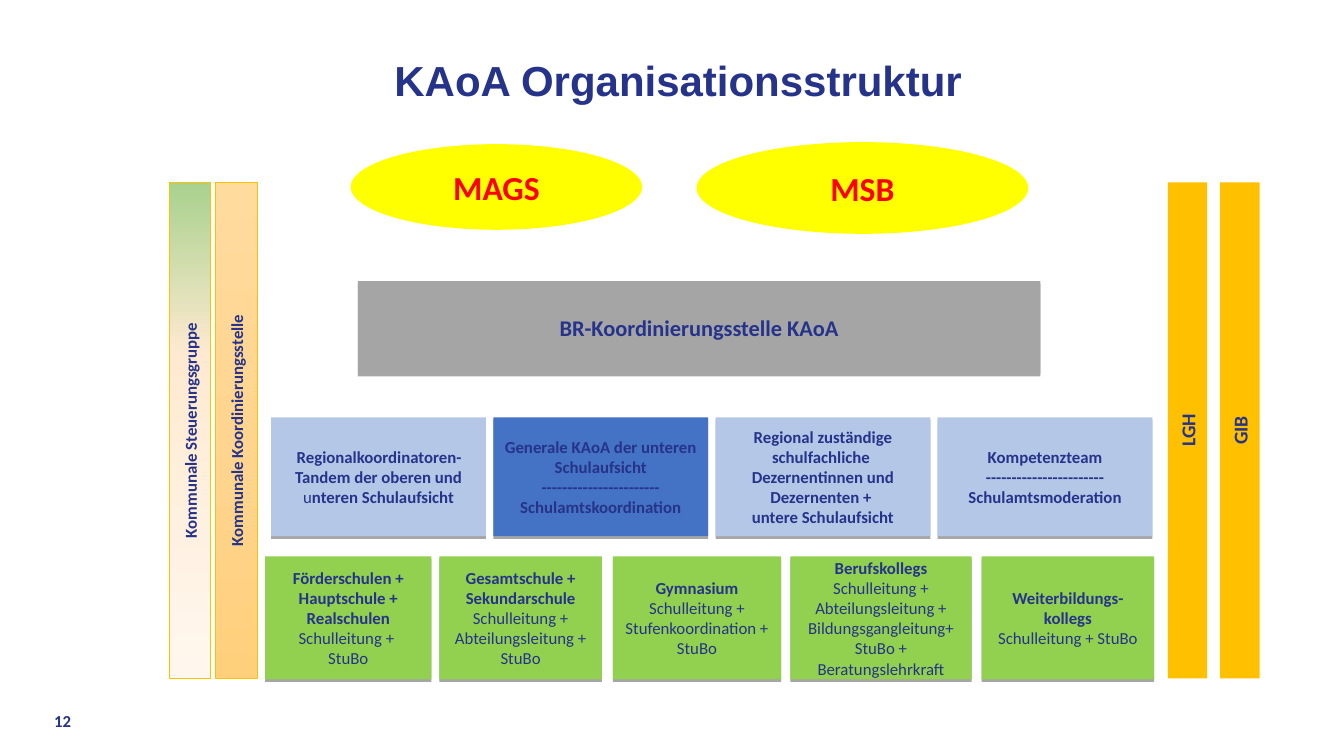
from lxml import etree
from pptx import Presentation
from pptx.dml.color import RGBColor
from pptx.enum.shapes import MSO_SHAPE as Shape
from pptx.enum.text import MSO_ANCHOR as Anchor, PP_ALIGN as Align
from pptx.oxml import parse_xml
from pptx.oxml.ns import nsdecls, qn
from pptx.util import Inches, Pt

WIDTH, HEIGHT = Inches(13.33), Inches(7.5)
COLUMN, ROW = WIDTH / 100, HEIGHT / 100
COLORS = {
    "navy": "26338A", "red": "FF0000", "yellow": "FFFF00", "gold": "FFC000",
    "gray": "A5A5A5", "blue": "4472C4", "sky": "B4C7E7", "green": "92D050",
}
STEERING_FADE = [(0, "A9D18E"), (35, "FFEAD1"), (100, "FFF7EE")]
COORDINATION_FADE = [(0, "FFDB9E"), (50, "FFD590"), (100, "FFD07C")]
PILLAR_TOP, PILLAR_HEIGHT = 24.13, 65.6
DIVIDER = "-----------------------"

OFFICES = [
    ("sky", ["Regionalkoordinatoren-Tandem der oberen und |u|nteren Schulaufsicht"]),
    ("blue", ["Generale KAoA der unteren", "Schulaufsicht", DIVIDER,
              "Schulamtskoordination"]),
    ("sky", ["Regional zuständige schulfachliche ",
             "Dezernentinnen und Dezernenten + ", "untere Schulaufsicht"]),
    ("sky", ["Kompetenzteam", DIVIDER, "Schulamtsmoderation"]),
]
SCHOOLS = [
    (19.73, 12.38, ["Förderschulen + Hauptschule + Realschulen",
                    "|Schulleitung + ", "|StuBo"]),
    (32.7, 12.08, ["Gesamtschule +", "Sekundarschule",
                   "|Schulleitung + Abteilungsleitung + StuBo"]),
    (45.6, 12.53, ["Gymnasium", "|Schulleitung +", "|Stufenkoordination + StuBo"]),
    (58.8, 13.5, ["Berufskollegs",
                  "|Schulleitung + Abteilungsleitung + Bildungsgangleitung+",
                  "|StuBo + Beratungslehrkraft"]),
    (73.05, 12.83, ["Weiterbildungs-kollegs", "|Schulleitung + StuBo"]),
]


def place(left, top, width, height):
    return (round(left * COLUMN), round(top * ROW),
            round(width * COLUMN), round(height * ROW))


def write(frame, lines, size, color="navy", face="Calibri", align=Align.CENTER):
    """Parts of a line divided by | alternate between bold and regular."""
    frame.word_wrap = True
    frame.vertical_anchor = Anchor.MIDDLE
    for number, line in enumerate(lines):
        paragraph = frame.add_paragraph() if number else frame.paragraphs[0]
        paragraph.alignment = align
        font = paragraph.font
        font.name, font.size = face, Pt(size)
        font.color.rgb = RGBColor.from_string(COLORS[color])
        parts = [(part, i % 2 == 0) for i, part in enumerate(line.split("|")) if part]
        for part, bold in parts:
            run = paragraph.add_run()
            run.text = part
            if len(parts) > 1:
                run.font.bold = bold
        if len(parts) == 1:
            font.bold = parts[0][1]


def add_label(slide, area, lines, size, **style):
    frame = slide.shapes.add_textbox(*area).text_frame
    write(frame, lines, size, **style)
    return frame


def add_block(slide, area, fill, lines, size=12, kind=Shape.RECTANGLE, color="navy"):
    block = slide.shapes.add_shape(kind, *area)
    block.shadow.inherit = False
    block.fill.solid()
    block.fill.fore_color.rgb = RGBColor.from_string(COLORS[fill])
    block.line.fill.background()
    write(block.text_frame, lines, size, color)
    return block


def add_raised_block(slide, area, fill, lines, size=12):
    block = add_block(slide, area, fill, lines, size)
    effects = block.element.spPr.find(qn("a:effectLst"))
    effects.append(parse_xml(
        f'<a:outerShdw {nsdecls("a")} blurRad="0" dist="22860" dir="5400000" '
        'rotWithShape="0"><a:srgbClr val="000000"><a:alpha val="35000"/>'
        '</a:srgbClr></a:outerShdw>'))


def add_turned_pillar(slide, left, label):
    x, y, width, height = place(left, PILLAR_TOP, 2.93, PILLAR_HEIGHT)
    shift = (height - width) // 2
    pillar = add_block(slide, (x - shift, y + shift, height, width),
                       "gold", [label], 14)
    pillar.rotation = 270


def add_fading_pillar(slide, left, label, fade):
    area = place(left, PILLAR_TOP, 3.08, PILLAR_HEIGHT)
    pillar = add_block(slide, area, "gold", [label])
    pillar.line.color.rgb = RGBColor.from_string(COLORS["gold"])
    pillar.line.width = Pt(0.5)
    pillar.text_frame._txBody.bodyPr.set("vert", "vert270")
    gradient = parse_xml(f'<a:gradFill {nsdecls("a")} rotWithShape="1"/>')
    stops = etree.SubElement(gradient, qn("a:gsLst"))
    for position, color in fade:
        stop = etree.SubElement(stops, qn("a:gs"), pos=str(position * 1000))
        etree.SubElement(stop, qn("a:srgbClr"), val=color)
    etree.SubElement(gradient, qn("a:lin"), ang="5400000", scaled="0")
    properties = pillar.element.spPr
    properties.replace(properties.find(qn("a:solidFill")), gradient)


def main():
    deck = Presentation()
    deck.slide_width, deck.slide_height = WIDTH, HEIGHT
    slide = deck.slides.add_slide(deck.slide_layouts[6])

    add_label(slide, place(3.3, 92.67, 13.58, 5.33), ["12 | ".replace("|", "¦")
              .replace("¦", "|")] and ["12 \u007c "], 12, align=Align.LEFT)
    title = add_label(slide, place(16.73, 6.27, 67.5, 8.53),
                      ["KAoA Organisationsstruktur"], 30, face="Arial")
    title.margin_left = title.margin_right = title.margin_top = title.margin_bottom = 0

    add_block(slide, place(26.1, 19.07, 21.68, 11.33), "yellow", ["MAGS"],
              24, Shape.OVAL, "red")
    add_block(slide, place(51.83, 18.8, 24.68, 12.13), "yellow", ["MSB"],
              24, Shape.OVAL, "red")
    add_turned_pillar(slide, 90.79, "GIB")
    add_turned_pillar(slide, 86.89, "LGH")
    add_raised_block(slide, place(26.63, 37.2, 50.78, 12.27), "gray",
                     ["BR-Koordinierungsstelle KAoA"], 16)
    for index, (fill, lines) in enumerate(OFFICES):
        add_raised_block(slide, place(20.18 + 16.53 * index, 55.2, 15.98, 15.73),
                         fill, lines)
    for left, width, lines in SCHOOLS:
        add_raised_block(slide, place(left, 73.6, width, 16.27), "green", lines)
    add_fading_pillar(slide, 16.05, "Kommunale Koordinierungsstelle", COORDINATION_FADE)
    add_fading_pillar(slide, 12.6, "Kommunale Steuerungsgruppe", STEERING_FADE)
    deck.save("out.pptx")


if __name__ == "__main__":
    main()
